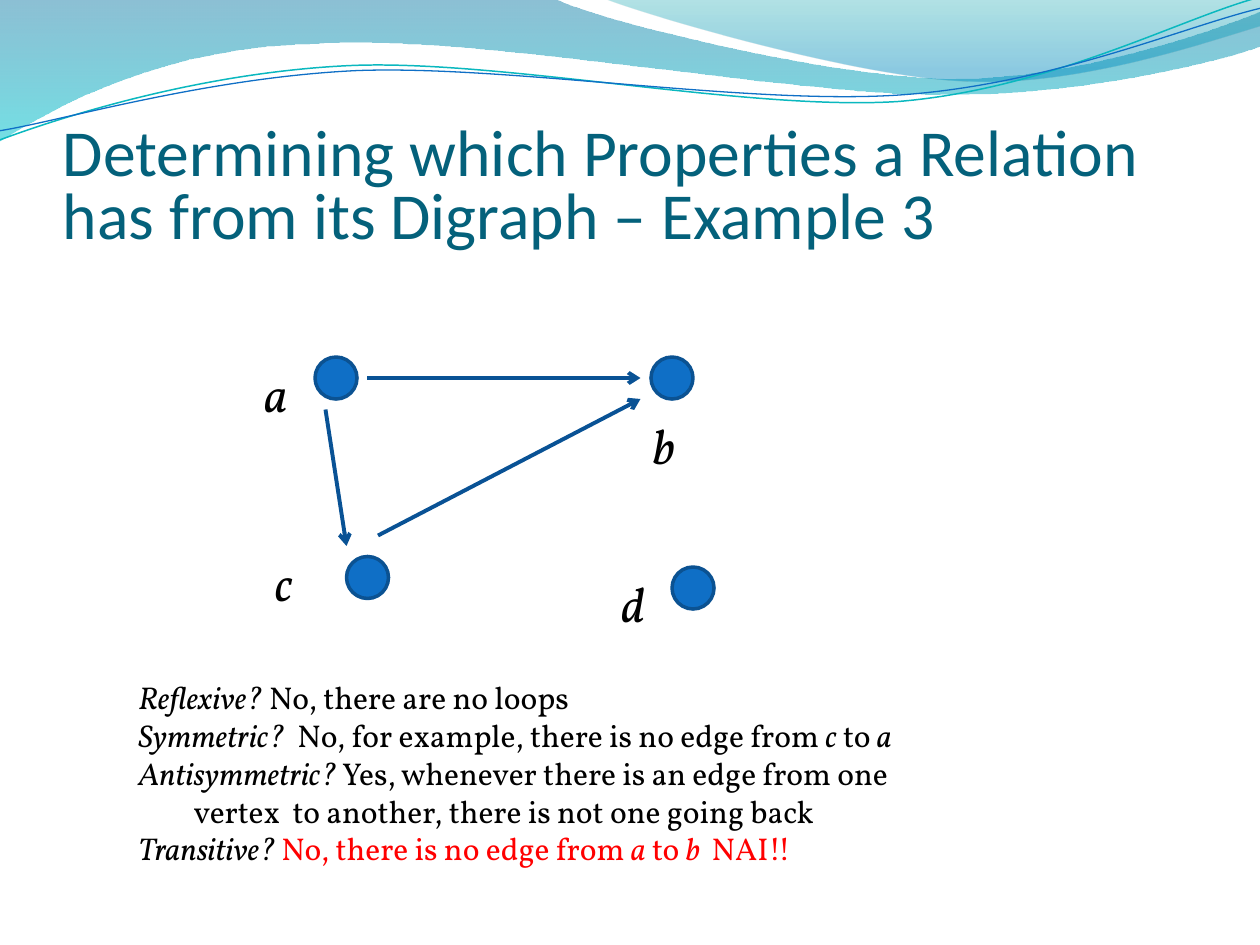
from lxml.etree import SubElement
from pptx import Presentation
from pptx.dml.color import RGBColor
from pptx.enum.shapes import MSO_CONNECTOR, MSO_SHAPE
from pptx.enum.text import MSO_ANCHOR, MSO_AUTO_SIZE
from pptx.oxml.ns import qn
from pptx.util import Pt

PX = 9525
BLACK = RGBColor(0x00, 0x00, 0x00)
RED = RGBColor(0xFF, 0x00, 0x00)
TITLE_TEAL = RGBColor(0x04, 0x61, 0x7B)
NODE_BLUE = RGBColor(0x0F, 0x6F, 0xC6)
NODE_EDGE = RGBColor(0x0B, 0x52, 0x92)
ARROW_BLUE = RGBColor(0x09, 0x52, 0x95)
LINE_TEAL = RGBColor(0x0A, 0xB8, 0xBF)
DEEP_BLUE = RGBColor(0x00, 0x74, 0xA1)
AQUA = RGBColor(0x00, 0xC6, 0xCF)
GREEN_TEAL = RGBColor(0x00, 0xA1, 0xA9)
SKY_BLUE = RGBColor(0x00, 0x8B, 0xBF)

LEFT_WAVE = [(0, 0), (422, -1), (457, 16, 637, 60, 728, 60), (819, 60, 920, 25, 960, 9),
             (961, 35), (944, 42, 835, 73, 716, 72), (596, 72, 367, 27, 247, 33),
             (124, 35, 44, 80, -1, 108)]
RIGHT_WAVE = [(460, -1), (489, 11, 655, 60, 738, 62), (822, 66, 923, 31, 960, 20), (960, 0)]
TEAL_CURVE = [(-2, 84), (45, 69, 152, 40, 266, 40), (380, 40, 567, 89, 683, 87),
              (799, 83, 901, 34, 960, 21)]
BLUE_CURVE = [(-2, 77), (44, 72, 157, 44, 272, 44), (387, 45, 572, 85, 687, 82),
              (802, 79, 904, 40, 962, 29)]

NODES = {"a": (80, 0, 32, 0), "b": (336, 0, 328, 40),
         "c": (104, 152, 40, 144), "d": (352, 160, 304, 160)}
EDGES = [(120, 16, 328, 16), (88, 40, 104, 144), (128, 136, 328, 32)]

ANSWERS = [
    (0, [("Reflexive?", True, BLACK), (" No, there are no loops", False, BLACK)]),
    (0, [("Symmetric?", True, BLACK),
         ("  No, for example, there is no edge from ", False, BLACK),
         ("c", True, BLACK), (" to ", False, BLACK), ("a", True, BLACK)]),
    (0, [("Antisymmetric?", True, BLACK),
         (" Yes, whenever there is an edge from one", False, BLACK)]),
    (42, [("vertex  to another, there is not one going back", False, BLACK)]),
    (0, [("Transitive? ", True, BLACK), ("No, there is no edge from ", False, RED),
         ("a", True, RED), (" to ", False, RED), ("b ", True, RED), (" ΝΑΙ!!", False, RED)]),
]


def add_outline(shapes, left, top, segments, close):
    """Add a freeform of straight (2 numbers) and cubic (6 numbers) segments."""
    pts = [((left + x) * PX, (top + y) * PX)
           for seg in segments for x, y in zip(seg[::2], seg[1::2])]
    builder = shapes.build_freeform(*pts[0], scale=1.0)
    builder.add_line_segments(pts[1:], close=close)
    sp = builder.convert_to_shape()
    sp.shadow.inherit = False
    steps = iter(list(sp.element.iter(qn("a:lnTo"))))
    for seg in segments[1:]:
        step = next(steps)
        if len(seg) == 6:
            cubic = step.makeelement(qn("a:cubicBezTo"))
            step.addprevious(cubic)
            for part in (step, next(steps), next(steps)):
                cubic.append(part[0])
                part.getparent().remove(part)
    return sp


def add_waves(s, left, top):
    """Draw the banner of two translucent waves and two thin curves."""
    waves = [(LEFT_WAVE, ((0, DEEP_BLUE, 45), (1, AQUA, 55))),
             (RIGHT_WAVE, ((0, GREEN_TEAL, 30), (0.8, SKY_BLUE, 45)))]
    for segments, stops in waves:
        sp = add_outline(s.shapes, left, top, segments, True)
        sp.line.fill.background()
        sp.fill.gradient()
        sp.fill.gradient_angle = 270
        for stop, (position, color, _) in zip(sp.fill.gradient_stops, stops):
            stop.position = position
            stop.color.rgb = color
        colors = sp.element.spPr.iter(qn("a:srgbClr"))
        for clr, (_, _, opacity) in zip(colors, stops):
            SubElement(clr, qn("a:alpha"), val=str(opacity * 1000))
    curves = s.shapes.add_group_shape().shapes
    for segments, color, width in ((TEAL_CURVE, LINE_TEAL, 0.85), (BLUE_CURVE, NODE_BLUE, 0.75)):
        sp = add_outline(curves, left, top, segments, False)
        sp.rotation = 357.3
        sp.fill.background()
        sp.line.color.rgb = color
        sp.line.width = Pt(width)


def add_box(s, left, top, width, height):
    """Add a wrapping text box and return its text frame."""
    tf = s.shapes.add_textbox(left * PX, top * PX, width * PX, height * PX).text_frame
    tf.word_wrap = True
    return tf


def add_run(p, text, font, size, color, italic=False):
    """Add one formatted run to a paragraph."""
    r = p.add_run()
    r.text = text
    r.font.name = font
    r.font.size = Pt(size)
    r.font.color.rgb = color
    r.font.italic = italic


def add_title(s, left, top, width, height):
    """Write the slide title at the bottom of its box."""
    tf = add_box(s, left, top, width, height)
    tf.vertical_anchor = MSO_ANCHOR.BOTTOM
    tf.margin_left = tf.margin_right = tf.margin_bottom = 0
    p = tf.paragraphs[0]
    p.line_spacing = 0.8
    add_run(p, "Determining which Properties a Relation has from its Digraph – Example 3",
            "Calibri", 37.5, TITLE_TEAL)


def add_digraph(s, left, top):
    """Draw the vertices, their labels and the directed edges."""
    for name, (x, y, label_x, label_y) in NODES.items():
        sp = s.shapes.add_shape(MSO_SHAPE.OVAL, (left + x) * PX, (top + y) * PX, 32 * PX, 32 * PX)
        sp.shadow.inherit = False
        sp.fill.solid()
        sp.fill.fore_color.rgb = NODE_BLUE
        sp.line.color.rgb = NODE_EDGE
        sp.line.width = Pt(2)
        tf = add_box(s, left + label_x, top + label_y, 40, 55)
        tf.auto_size = MSO_AUTO_SIZE.SHAPE_TO_FIT_TEXT
        add_run(tf.paragraphs[0], name, "Vollkorn", 28, BLACK, True)
    for x1, y1, x2, y2 in EDGES:
        edge = s.shapes.add_connector(MSO_CONNECTOR.STRAIGHT, (left + x1) * PX, (top + y1) * PX,
                                      (left + x2) * PX, (top + y2) * PX)
        edge.line.color.rgb = ARROW_BLUE
        edge.line.width = Pt(2.25)
        SubElement(edge.element.spPr.find(qn("a:ln")), qn("a:tailEnd"), type="arrow")
        SubElement(edge.element.spPr, qn("a:effectLst"))


def add_answers(s, left, top, width, height):
    """List each property of the relation with its answer."""
    tf = add_box(s, left, top, width, height)
    tf.auto_size = MSO_AUTO_SIZE.SHAPE_TO_FIT_TEXT
    for i, (indent, runs) in enumerate(ANSWERS):
        p = tf.add_paragraph() if i else tf.paragraphs[0]
        if indent:
            p._p.get_or_add_pPr().set("marL", str(indent * PX))
        for text, italic, color in runs:
            add_run(p, text, "Vollkorn", 18, color, italic)


def main():
    """Build and save the slide."""
    prs = Presentation()
    prs.slide_width, prs.slide_height = 960 * PX, 720 * PX
    s = prs.slides.add_slide(prs.slide_layouts[6])
    add_waves(s, 0, 0)
    add_digraph(s, 160, 272)
    add_answers(s, 96, 512, 696, 156)
    add_title(s, 48, 72, 864, 120)
    prs.save("out.pptx")


if __name__ == "__main__":
    main()
